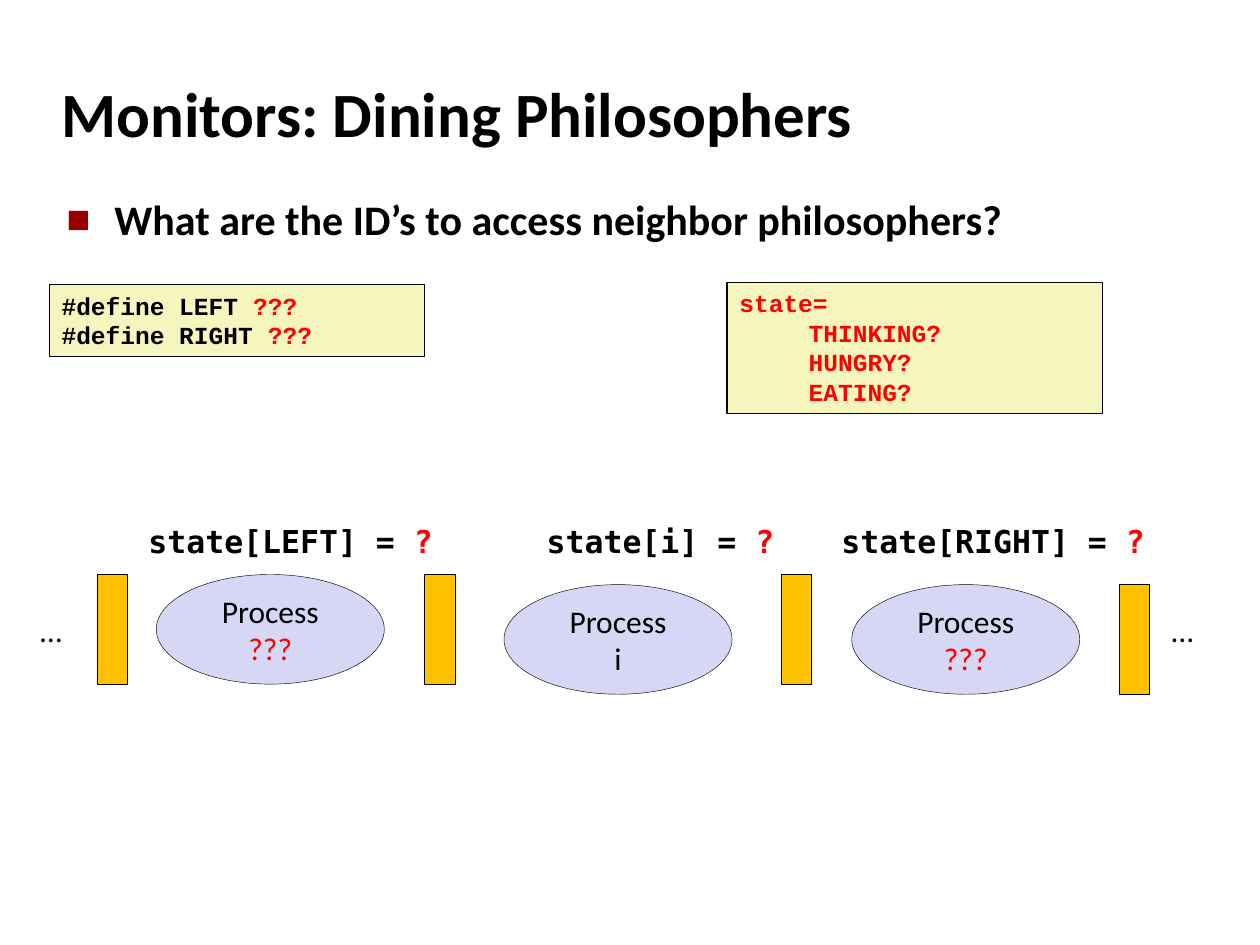
import pptx
import pptx.dml.color
import pptx.enum.shapes
import pptx.enum.text
import pptx.util
from lxml import etree
from pptx.util import Inches, Pt

SHAPE = pptx.enum.shapes.MSO_SHAPE
ANCHOR = pptx.enum.text.MSO_ANCHOR
ALIGN = pptx.enum.text.PP_ALIGN
COLORS = {"text": "000000", "ask": "FF0000", "code": "F6F5BD",
          "process": "D6D6F5", "fork": "FFC000", "bullet": "990000"}
SANS, CODE, MONO = "Calibri", "Courier New", "DejaVu Sans Mono"

# Every paragraph is a list of (text, color) runs.
TITLE = [("Monitors: Dining Philosophers", "text")]
QUESTION = [("What are the ID’s to access neighbor philosophers?", "text")]
# left, top, height, paragraphs, how many first paragraphs are not indented
CODE_BOXES = [
    (0.39, 2.26, 0.57, [[("#define LEFT ", "text"), ("???", "ask")],
                        [("#define RIGHT ", "text"), ("???", "ask")]], 2),
    (5.77, 2.24, 1.04, [[("state=", "ask")], [("THINKING?", "ask")],
                        [("HUNGRY?", "ask")], [("EATING?", "ask")]], 1),
]
HIGH, LOW = 4.56, 4.64
PROCESSES = [(1.24, HIGH, ("???", "ask")), (4, LOW, ("i", "text")),
             (6.76, LOW, ("???", "ask"))]
FORKS = [(0.77, HIGH), (3.37, HIGH), (6.2, HIGH), (8.88, LOW)]
STATES = [(1.08, 2.46, "state[LEFT] = "), (4.24, 2.01, "state[i] = "),
          (6.58, 2.61, "state[RIGHT] = ")]
ELLIPSES = [0.22, 9.2]


def rgb(name):
    return pptx.dml.color.RGBColor.from_string(COLORS[name])


def add_runs(p, runs, font, size, bold=False):
    for text, color in runs:
        r = p.add_run()
        r.text = text
        r.font.name, r.font.size, r.font.bold = font, Pt(size), bold
        r.font.color.rgb = rgb(color)


def add_text(slide, box, runs, font, size, bold=False, wrap=False):
    tf = slide.shapes.add_textbox(*map(Inches, box)).text_frame
    tf.word_wrap = wrap
    add_runs(tf.paragraphs[0], runs, font, size, bold)
    return tf


def add_box(slide, kind, box, fill, line_width):
    s = slide.shapes.add_shape(kind, *map(Inches, box))
    s.shadow.inherit = False
    s.fill.solid()
    s.fill.fore_color.rgb = rgb(fill)
    s.line.color.rgb = rgb("text")
    s.line.width = Pt(line_width)
    return s


def add_bullet(p, indent):
    pPr = p._p.get_or_add_pPr()
    pPr.set("marL", str(Inches(indent)))
    pPr.set("indent", str(-Inches(indent)))
    ns = pptx.oxml.ns.qn
    color = etree.SubElement(pPr, ns("a:buClr"))
    etree.SubElement(color, ns("a:srgbClr"), val=COLORS["bullet"])
    etree.SubElement(pPr, ns("a:buSzPct"), val="60000")
    etree.SubElement(pPr, ns("a:buFont"), typeface=SANS)
    etree.SubElement(pPr, ns("a:buChar"), char="■")


def main():
    prs = pptx.Presentation()
    prs.slide_width, prs.slide_height = Inches(10), Inches(7.5)
    slide = prs.slides.add_slide(prs.slide_layouts[6])

    tf = add_text(slide, (0.39, 0.48, 8.3, 0.83), TITLE, SANS, 36, True, True)
    tf.vertical_anchor = ANCHOR.MIDDLE
    tf = add_text(slide, (0.43, 1.49, 8.64, 0.75), QUESTION, SANS, 24, True, True)
    tf.paragraphs[0].space_before = Pt(2)
    add_bullet(tf.paragraphs[0], 0.38)

    for left, top, height, lines, flush in CODE_BOXES:
        s = add_box(slide, SHAPE.RECTANGLE, (left, top, 2.98, height), "code", 0.75)
        tf = s.text_frame
        tf.word_wrap = True
        tf.vertical_anchor = ANCHOR.TOP
        for i, runs in enumerate(lines):
            p = tf.add_paragraph() if i else tf.paragraphs[0]
            p.alignment = ALIGN.LEFT
            if i >= flush:
                p._p.get_or_add_pPr().set("marL", str(Inches(0.55)))
            add_runs(p, runs, CODE, 14, True)

    for left, top, name in PROCESSES:
        s = add_box(slide, SHAPE.OVAL, (left, top, 1.81, 0.87), "process", 0.25)
        tf = s.text_frame
        tf.word_wrap = False
        tf.vertical_anchor = ANCHOR.MIDDLE
        p = tf.paragraphs[0]
        p.alignment = ALIGN.CENTER
        add_runs(p, [("Process", "text")], SANS, 18)
        p.add_line_break()
        add_runs(p, [name], SANS, 18)

    for left, top in FORKS:
        add_box(slide, SHAPE.RECTANGLE, (left, top, 0.24, 0.87), "fork", 0.25)
    for left in ELLIPSES:
        add_text(slide, (left, 4.8, 0.37, 0.41), [("…", "text")], SANS, 18)
    for left, width, label in STATES:
        add_text(slide, (left, 4.09, width, 0.41),
                 [(label, "text"), ("?", "ask")], MONO, 18, True)

    prs.save("out.pptx")


if __name__ == "__main__":
    main()
